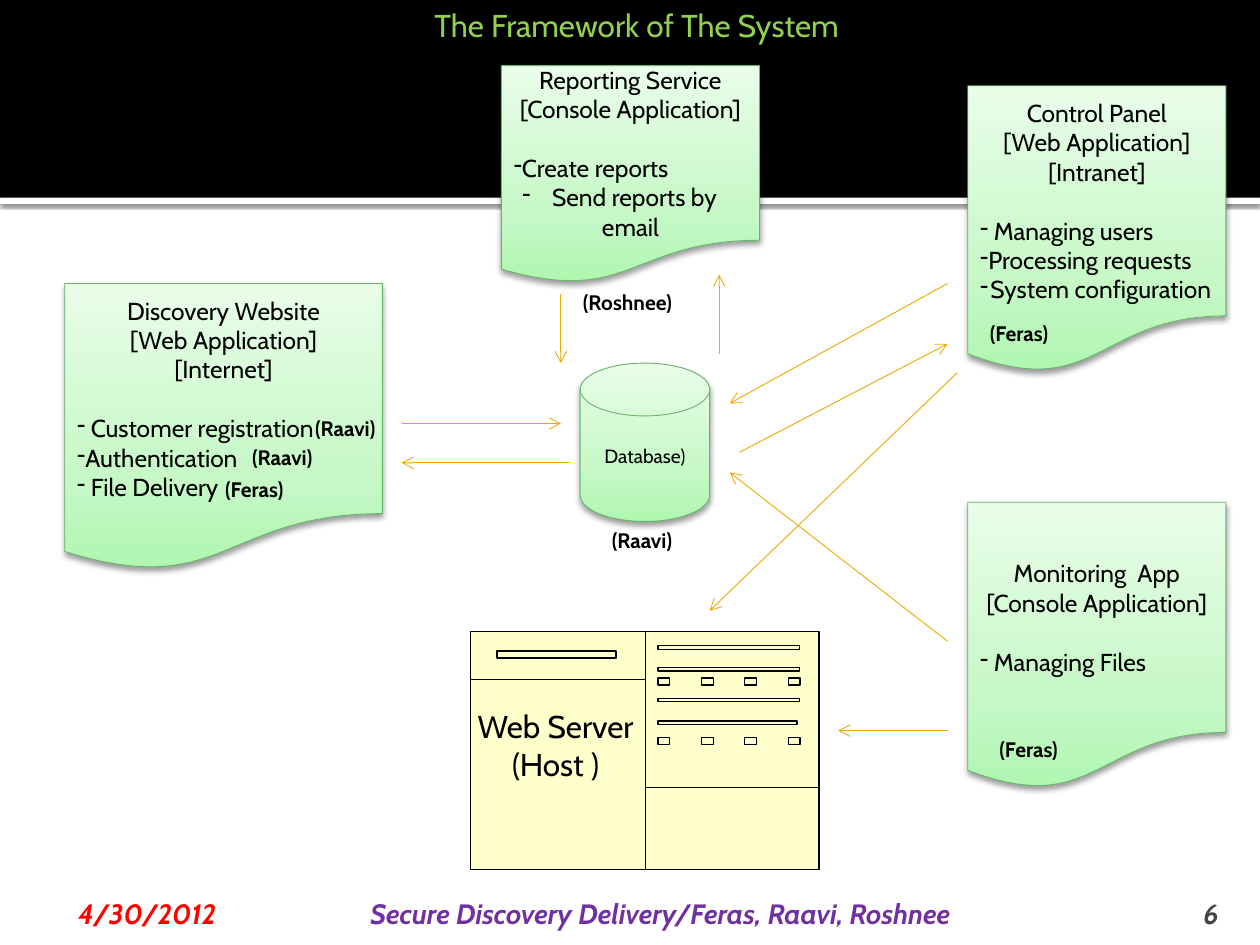
from copy import deepcopy

from lxml.etree import SubElement
from pptx import Presentation
from pptx.dml.color import RGBColor
from pptx.enum.shapes import MSO_CONNECTOR, MSO_SHAPE
from pptx.enum.text import MSO_ANCHOR, PP_ALIGN
from pptx.oxml.ns import qn
from pptx.util import Pt

FONT = "Cabin"
COLORS = {
    "black": "000000", "white": "FFFFFF", "title": "92D050", "green_line": "67B569",
    "green_dark": "B0F6B1", "green_mid": "C8F8C8", "green_light": "E9FDE9",
    "arrow": "EBA900", "server": "FFFFCC", "date": "FF0000",
    "footer": "7030A0", "number": "454545",
}
LINE_HEIGHT = 16.8  # one line of 14 pt text

# box, heading lines, tasks as (text, alignment)
DOCUMENTS = [
    ((286.5, 37.5, 147.5, 124.5), ["Reporting Service", "[Console Application]"],
     [("Create reports", PP_ALIGN.LEFT), ("Send reports by email", PP_ALIGN.CENTER)]),
    ((553, 49, 147.5, 164), ["Control Panel", "[Web Application]", "[Intranet]"],
     [(" Managing users", PP_ALIGN.LEFT), ("Processing requests", PP_ALIGN.LEFT),
      ("System configuration", PP_ALIGN.CENTER)]),
    ((553, 287, 147.5, 164), ["Monitoring  App", "[Console Application]"],
     [(" Managing Files", PP_ALIGN.LEFT)]),
    ((37, 162, 181.5, 164), ["Discovery Website", "[Web Application]", "[Internet]"],
     [(" Customer registration", PP_ALIGN.LEFT), ("Authentication", PP_ALIGN.LEFT),
      (" File Delivery", PP_ALIGN.LEFT)]),
]
ARROWS = [
    (411, 202.5, 411, 157), (320.5, 168, 320.5, 207.5), (229.5, 242, 320.5, 242),
    (326, 264.5, 229.5, 264.5), (541.5, 162, 417, 230.5), (422.5, 258.5, 541.5, 196.5),
    (547, 213, 405.5, 349), (541.5, 417.5, 479, 417.5), (541.5, 366.5, 417, 270),
]
OWNERS = [
    ("(Feras)", 121.5, 268.5), ("(Feras)", 564, 417.5), ("(Feras)", 558.5, 179.5),
    ("(Raavi)", 137, 250.5), ("(Raavi)", 173, 234), ("(Raavi)", 342.5, 298),
    ("(Roshnee)", 326, 162),
]


def color(name):
    return RGBColor.from_string(COLORS[name])


def points(values):
    return [Pt(value) for value in values]


def add_run(paragraph, text, size, color_name="black", bold=False, italic=False):
    run = paragraph.add_run()
    run.text = text
    font = run.font
    font.name, font.size = FONT, Pt(size)
    font.bold, font.italic = bold, italic
    font.color.rgb = color(color_name)


def add_text(slide, box, lines, size, alignment=PP_ALIGN.LEFT, anchor=MSO_ANCHOR.TOP,
             insets=None, **style):
    frame = slide.shapes.add_textbox(*points(box)).text_frame
    frame.word_wrap = True
    frame.vertical_anchor = anchor
    if insets:
        (frame.margin_left, frame.margin_top,
         frame.margin_right, frame.margin_bottom) = points(insets)
    for index, line in enumerate(lines):
        paragraph = frame.add_paragraph() if index else frame.paragraphs[0]
        paragraph.alignment = alignment
        add_run(paragraph, line, size, **style)


def set_shadow(shape, opacity, blur, distance):
    """Give the shape a soft shadow that falls straight down."""
    shape.shadow.inherit = False
    effects = shape._element.spPr.find(qn("a:effectLst"))
    shadow = SubElement(effects, qn("a:outerShdw"), blurRad=str(Pt(blur)),
                        dist=str(Pt(distance)), dir="5400000", rotWithShape="0")
    shade = SubElement(shadow, qn("a:srgbClr"), val=COLORS["black"])
    SubElement(shade, qn("a:alpha"), val=str(opacity * 1000))


def add_green_shape(slide, kind, box):
    shape = slide.shapes.add_shape(kind, *points(box))
    shape.fill.gradient()
    shape.fill.gradient_angle = 90
    stop_list = next(shape._element.spPr.iter(qn("a:gsLst")))
    stop_list.append(deepcopy(stop_list[0]))
    stops = [(0, "green_dark"), (0.35, "green_mid"), (1, "green_light")]
    for stop, (position, name) in zip(shape.fill.gradient_stops, stops):
        stop.position = position
        stop.color.rgb = color(name)
    shape.line.color.rgb = color("green_line")
    shape.line.width = Pt(0.5)
    set_shadow(shape, 38, 3.5, 2)
    shape.text_frame.word_wrap = True
    shape.text_frame.vertical_anchor = MSO_ANCHOR.MIDDLE
    return shape


def add_document(slide, box, heading, tasks):
    frame = add_green_shape(slide, MSO_SHAPE.FLOWCHART_DOCUMENT, box).text_frame
    for index, line in enumerate(heading):
        paragraph = frame.add_paragraph() if index else frame.paragraphs[0]
        paragraph.alignment = PP_ALIGN.CENTER
        add_run(paragraph, line, 14)
    for index, (task, alignment) in enumerate(tasks):
        paragraph = frame.add_paragraph()
        paragraph.alignment = alignment
        if index == 0:
            paragraph.space_before = Pt(LINE_HEIGHT)
        properties = paragraph._p.get_or_add_pPr()
        SubElement(properties, qn("a:buFontTx"))
        SubElement(properties, qn("a:buChar"), char="-")
        add_run(paragraph, task, 14)


def add_database(slide, box):
    shape = add_green_shape(slide, MSO_SHAPE.FLOWCHART_MAGNETIC_DISK, box)
    paragraph = shape.text_frame.paragraphs[0]
    paragraph.alignment = PP_ALIGN.CENTER
    add_run(paragraph, "Database)", 11)


def rectangle(left, top, width, height):
    right, bottom = left + width, top + height
    return [(left, top), (right, top), (right, bottom), (left, bottom), (left, top)]


def add_outline(slide, box, contours):
    """Draw contours, given relative to the box, as one black-lined freeform."""
    placed = [[(Pt(box[0] + x), Pt(box[1] + y)) for x, y in contour] for contour in contours]
    builder = slide.shapes.build_freeform(*placed[0][0])
    for index, contour in enumerate(placed):
        if index:
            builder.move_to(*contour[0])
        builder.add_line_segments(contour[1:], close=False)
    shape = builder.convert_to_shape()
    shape.shadow.inherit = False
    shape.fill.background()
    shape.line.color.rgb = color("black")
    shape.line.width = Pt(0.75)
    return shape


def add_server(slide, box):
    left, top, width, height = box
    divider = 100
    case = add_outline(slide, box, [rectangle(0, 0, width, height)])
    case.fill.solid()
    case.fill.fore_color.rgb = color("server")
    details = [
        rectangle(15, 11, 68, 4),
        [(divider, 0), (divider, height)],
        [(0, 27.5), (divider, 27.5)],
        [(divider, 89), (width, 89)],
    ]
    details += [rectangle(107, y, vent, 2)
                for y, vent in [(8, 81), (20.5, 81), (38, 81), (51, 79.5)]]
    details += [rectangle(107 + 24.8 * column, y, 6.8, 4)
                for y in (26.5, 60.5) for column in range(4)]
    add_outline(slide, box, details)
    add_text(slide, (left - 5.5, top + 39.5, 108, 51), ["Web Server", "(Host )"], 18,
             PP_ALIGN.CENTER)


def add_arrow(slide, ends):
    connector = slide.shapes.add_connector(MSO_CONNECTOR.STRAIGHT, *points(ends))
    connector.line.color.rgb = color("arrow")
    connector.line.width = Pt(0.5)
    properties = connector._element.spPr
    SubElement(properties.find(qn("a:ln")), qn("a:tailEnd"), type="arrow")
    SubElement(properties, qn("a:effectLst"))


def add_header(slide, box):
    left, top, width, height = box
    for name, band in [("white", (left, top + height, width, 3.6)), ("black", box)]:
        shape = slide.shapes.add_shape(MSO_SHAPE.RECTANGLE, *points(band))
        shape.fill.solid()
        shape.fill.fore_color.rgb = color(name)
        shape.line.fill.background()
        shape.shadow.inherit = False
        if name == "white":
            set_shadow(shape, 60, 2.5, 0.8)
    title = slide.shapes.title
    slide.shapes._spTree.append(title._element)  # bring in front of the bands
    title.left, title.top, title.width, title.height = points((241, 0, 249, 29))
    frame = title.text_frame
    frame.word_wrap = True
    frame.vertical_anchor = MSO_ANCHOR.TOP
    frame.paragraphs[0].alignment = PP_ALIGN.LEFT
    add_run(frame.paragraphs[0], "The Framework of The System", 18, "title")


def add_footer(slide, top, height):
    parts = [
        ("4/30/2012", 36, 168, "date", PP_ALIGN.LEFT, (8.6, 3.6, 3.6, 0)),
        ("Secure Discovery Delivery/Feras, Raavi, Roshnee", 208, 433.5, "footer",
         PP_ALIGN.LEFT, (3.6, 3.6, 3.6, 0)),
        ("6", 646, 57.5, "number", PP_ALIGN.RIGHT, (7.2, 3.6, 7.2, 0)),
    ]
    for text, left, width, name, alignment, insets in parts:
        add_text(slide, (left, top, width, height), [text], 16, alignment,
                 MSO_ANCHOR.BOTTOM, insets, color_name=name, bold=True, italic=True)


def main():
    presentation = Presentation()
    presentation.slide_width, presentation.slide_height = Pt(720), Pt(540)
    slide = presentation.slides.add_slide(presentation.slide_layouts[5])
    add_header(slide, (0, 0, 720, 113))
    add_database(slide, (331.5, 207.5, 74, 90.5))
    add_server(slide, (269, 361, 199, 136))
    for box, heading, tasks in DOCUMENTS:
        add_document(slide, box, heading, tasks)
    for ends in ARROWS:
        add_arrow(slide, ends)
    for owner, left, top in OWNERS:
        add_text(slide, (left, top, 73.5, 21.5), [owner], 12, bold=True)
    add_footer(slide, 510, 21.5)
    presentation.save("out.pptx")


if __name__ == "__main__":
    main()
